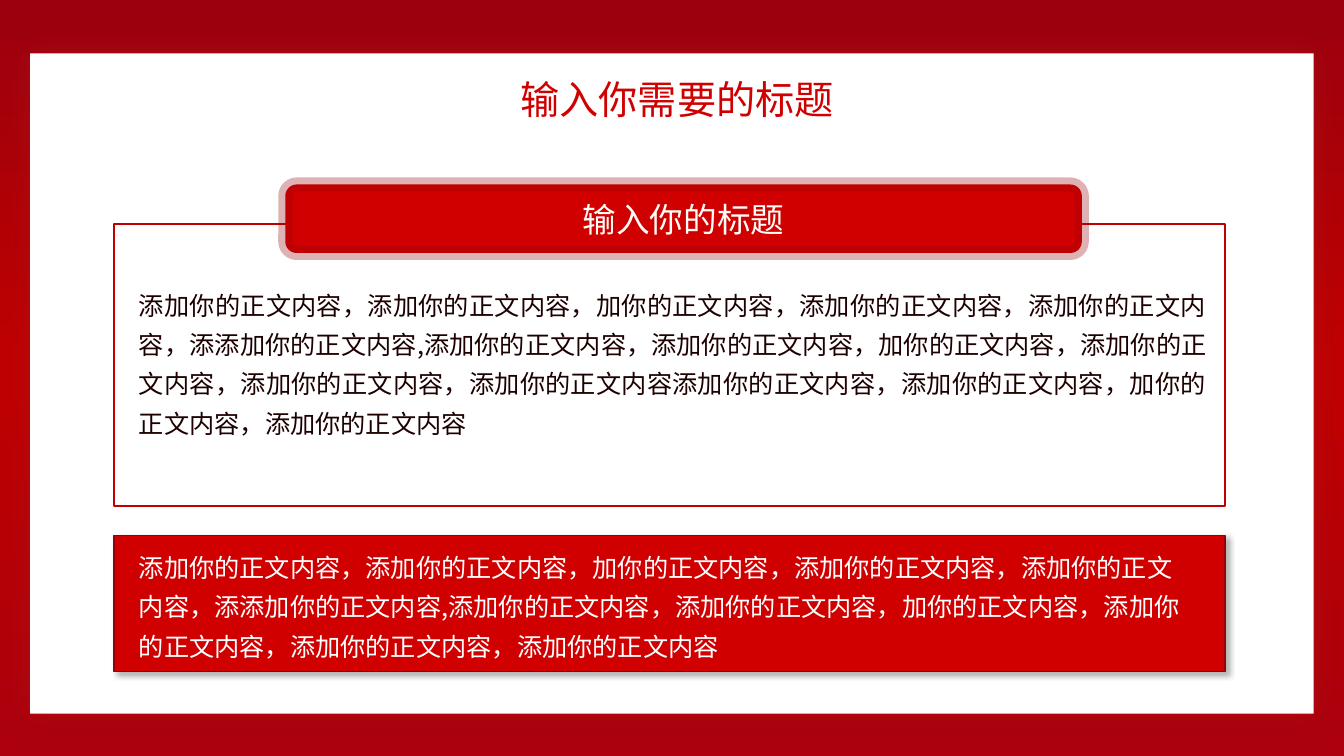
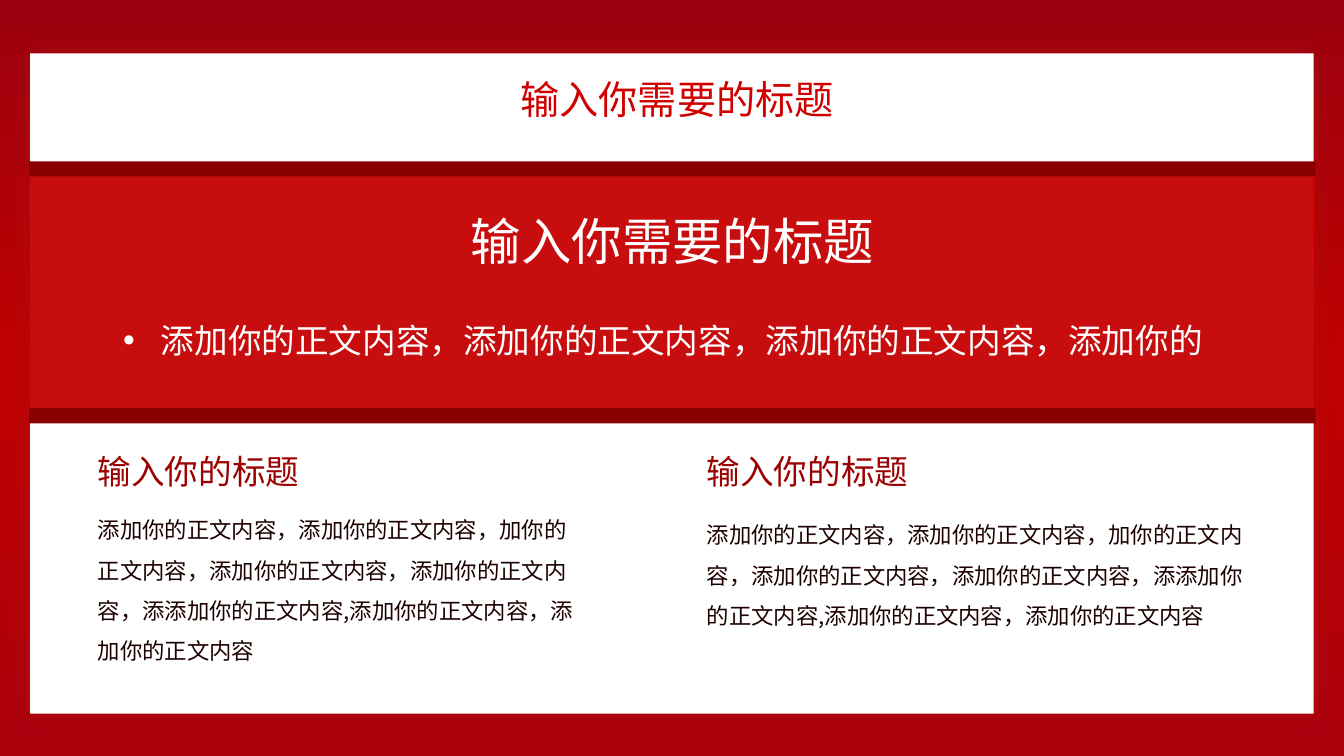
from lxml import etree
from pptx import Presentation
from pptx.dml.color import RGBColor
from pptx.enum.lang import MSO_LANGUAGE_ID
from pptx.enum.shapes import MSO_SHAPE
from pptx.enum.text import MSO_ANCHOR, MSO_AUTO_SIZE, PP_ALIGN
from pptx.oxml.ns import qn
from pptx.util import Inches, Pt

RECTANGLE = MSO_SHAPE.RECTANGLE
ROUNDED = MSO_SHAPE.ROUNDED_RECTANGLE
LEFT, CENTER, JUSTIFY = PP_ALIGN.LEFT, PP_ALIGN.CENTER, PP_ALIGN.JUSTIFY
TOP, MIDDLE = MSO_ANCHOR.TOP, MSO_ANCHOR.MIDDLE
NO_AUTOFIT = MSO_AUTO_SIZE.NONE
CHINESE = MSO_LANGUAGE_ID.SIMPLIFIED_CHINESE

FONT = "Noto Sans CJK SC"
COLORS = {
    "red": "D00000",
    "frame": "C00000",
    "band": "C40000",
    "edge": "95000B",
    "stripe": "890000",
    "heading": "9C0000",
    "ink": "1D0000",
    "white": "FFFFFF",
    "cream": "FFFDF8",
    "glow": "AA1B1A",
    "shadow": "000000",
}
BACKGROUND_STOPS = [(0, "9B000E"), (48, "C00000"), (100, "AC000D")]

TITLE = "输入你需要的标题"
HEADING = "输入你的标题"
OPENING = (
    "添加你的正文内容，添加你的正文内容，加你的正文内容，添加你的正文内容，"
    "添加你的正文内容，添添加你的正文内容,添加你的正文内容，添加你的正文内容"
)
SUMMARY = OPENING + "，加你的正文内容，添加你的正文内容，添加你的正文内容，添加你的正文内容"
DETAIL = SUMMARY + "添加你的正文内容，添加你的正文内容，加你的正文内容，添加你的正文内容"
BULLET = "添加你的正文内容，添加你的正文内容，添加你的正文内容，添加你的"


def add_child(parent, tag, **attributes):
    child = etree.SubElement(parent, qn(tag))
    for name, value in attributes.items():
        child.set(name, str(value))
    return child


def add_color(parent, color, opacity=100):
    node = add_child(parent, "a:srgbClr", val=color)
    if opacity < 100:
        add_child(node, "a:alpha", val=opacity * 1000)


def set_opacity(fill_parent, opacity):
    color = fill_parent.find(qn("a:solidFill")).find(qn("a:srgbClr"))
    add_child(color, "a:alpha", val=opacity * 1000)


def add_block(slide, place, fill=None, line=None, width=1, kind=RECTANGLE):
    shape = slide.shapes.add_shape(kind, *map(Inches, place))
    shape.shadow.inherit = False
    if fill:
        shape.fill.solid()
        shape.fill.fore_color.rgb = RGBColor.from_string(COLORS[fill])
    else:
        shape.fill.background()
    if line:
        shape.line.color.rgb = RGBColor.from_string(COLORS[line])
        shape.line.width = Pt(width)
    else:
        shape.line.fill.background()
    return shape


def add_shadow(shape, color, opacity, blur, distance=0, angle=0):
    effects = shape.element.spPr.find(qn("a:effectLst"))
    shadow = add_child(
        effects, "a:outerShdw", blurRad=Pt(blur), dist=Pt(distance),
        dir=angle * 60000, algn="ctr", rotWithShape=0,
    )
    add_color(shadow, COLORS[color], opacity)


def write(box, text, size, color, align=LEFT, spacing=1.0, anchor=TOP, wrap=True, inset=None):
    frame = box.text_frame
    frame.text = text
    frame.word_wrap = wrap
    frame.auto_size = NO_AUTOFIT
    frame.vertical_anchor = anchor
    if inset is not None:
        frame.margin_left = frame.margin_right = Inches(inset)
        frame.margin_top = frame.margin_bottom = Inches(inset)
    para = frame.paragraphs[0]
    para.alignment = align
    para.line_spacing = spacing
    para.space_before = Pt(0)
    span = para.runs[0]
    span.font.name = FONT
    span.font.size = Pt(size)
    span.font.language_id = CHINESE
    span.font.color.rgb = RGBColor.from_string(COLORS[color])
    latin = span.font._element.find(qn("a:latin"))
    latin.addnext(latin.makeelement(qn("a:ea"), {"typeface": FONT}))


def add_text(slide, place, text, size, color, **style):
    box = slide.shapes.add_textbox(*map(Inches, place))
    write(box, text, size, color, **style)


def move(shape, place):
    shape.left, shape.top, shape.width, shape.height = map(Inches, place)


def add_bullet(slide, place, text):
    body = slide.placeholders[1]
    move(body, place)
    body.element.getparent().append(body.element)
    properties = body.text_frame.paragraphs[0]._p.get_or_add_pPr()
    properties.set("marL", str(Inches(0.38)))
    properties.set("indent", str(Inches(-0.38)))
    add_child(properties, "a:buFont", typeface="Arial")
    add_child(properties, "a:buChar", char="•")
    write(body, text, 24, "white", spacing=1.3, inset=0)


def style_master(deck, slide):
    master = deck.slide_master
    fill = master.background.fill
    fill.gradient()
    fill.gradient_angle = 270
    stops = next(master.element.iter(qn("a:gsLst")))
    for stop in list(stops):
        stops.remove(stop)
    for position, color in BACKGROUND_STOPS:
        add_color(add_child(stops, "a:gs", pos=position * 1000), color)
    move(master.placeholders[0], (5.06, 0.7, 3.31, 0.57))
    panel = add_block(slide, (0.3, 0.53, 12.73, 6.55), "white")
    add_shadow(panel, "glow", 55, 20)
    panel.element.nvSpPr.cNvPr.set("id", "99")
    master.shapes.element.insert(2, panel.element)


def add_slide(deck, layout):
    slide = deck.slides.add_slide(deck.slide_layouts[layout])
    write(slide.shapes.title, TITLE, 28, "red", align=CENTER, anchor=MIDDLE, wrap=False)
    return slide


def fill_framed_slide(slide):
    add_block(slide, (1.13, 2.22, 11.02, 2.8), line="frame", width=1.5)
    add_text(slide, (1.28, 2.74, 10.79, 1.67), DETAIL, 18, "ink", align=JUSTIFY, spacing=1.3)
    label = add_block(slide, (2.83, 1.83, 7.9, 0.68), "red", "edge", 10, ROUNDED)
    set_opacity(label.element.spPr.find(qn("a:ln")), 30)
    write(label, HEADING, 24, "cream", align=CENTER, anchor=MIDDLE)
    summary = add_block(slide, (1.13, 5.31, 11.02, 1.35), "red", "edge")
    add_shadow(summary, "shadow", 30, 4, 3, 45)
    add_text(slide, (1.28, 5.34, 10.6, 1.67), SUMMARY, 18, "white", spacing=1.3)


def fill_banner_slide(slide):
    band = add_block(slide, (0.29, 1.74, 12.76, 2.31), "band")
    set_opacity(band.element.spPr, 95)
    for top in (1.6, 4.05):
        add_block(slide, (0.29, top, 12.76, 0.15), "stripe")
    add_text(slide, (4.67, 2.08, 4, 0.61), TITLE, 36, "white", align=CENTER, wrap=False, inset=0)
    add_bullet(slide, (1.22, 3.05, 10.89, 0.52), BULLET)
    for left, top, width, height in ((0.97, 4.99, 4.75, 1.62), (7.01, 5.04, 5.35, 1.21)):
        add_text(slide, (left, 4.47, 2, 0.4), HEADING, 24, "heading", wrap=False, inset=0)
        add_text(slide, (left, top, width, height), OPENING, 16, "ink", spacing=1.5, inset=0)


def main():
    deck = Presentation()
    deck.slide_width, deck.slide_height = Inches(13.33), Inches(7.5)
    framed = add_slide(deck, 5)
    style_master(deck, framed)
    fill_framed_slide(framed)
    fill_banner_slide(add_slide(deck, 1))
    deck.save("out.pptx")


if __name__ == "__main__":
    main()
